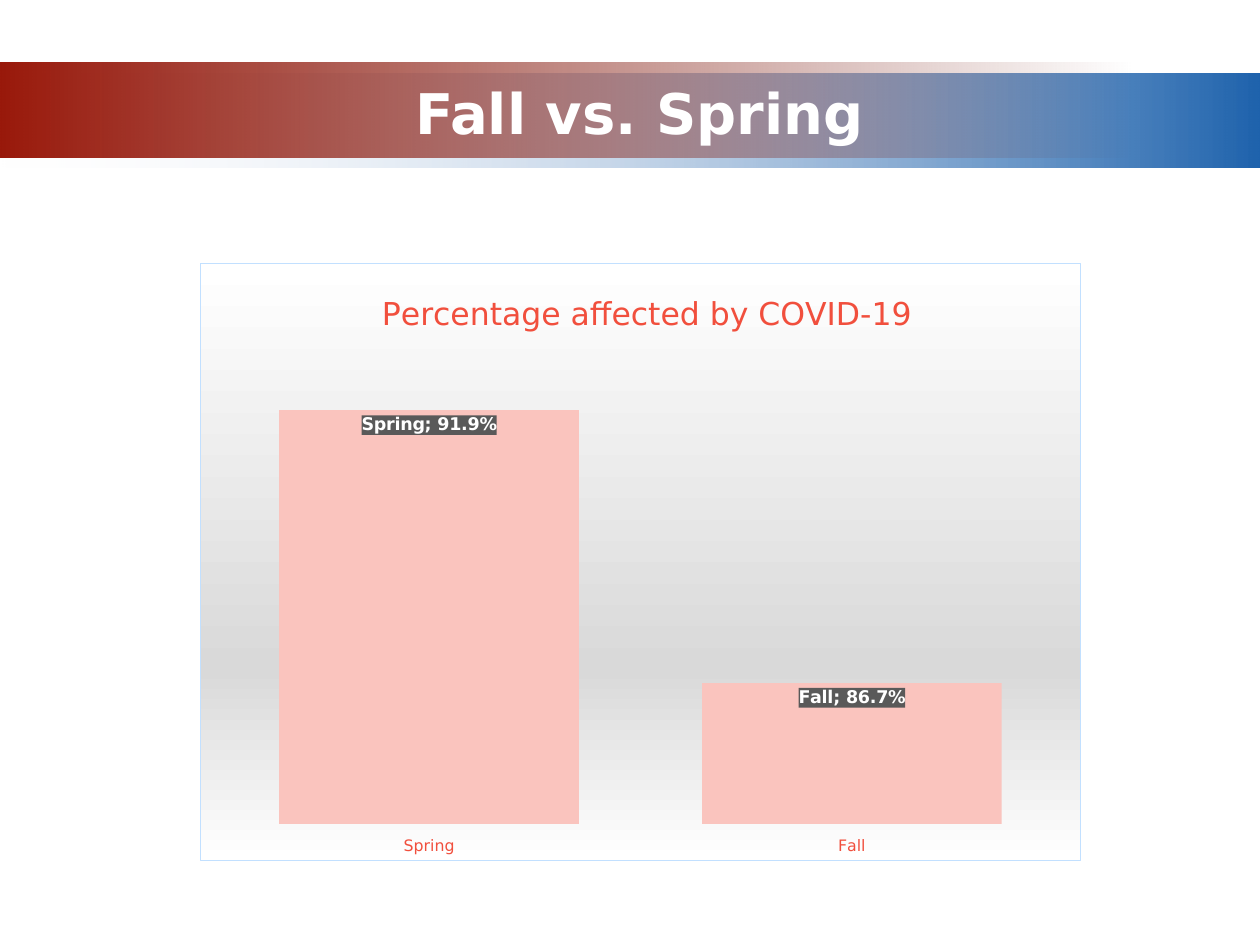
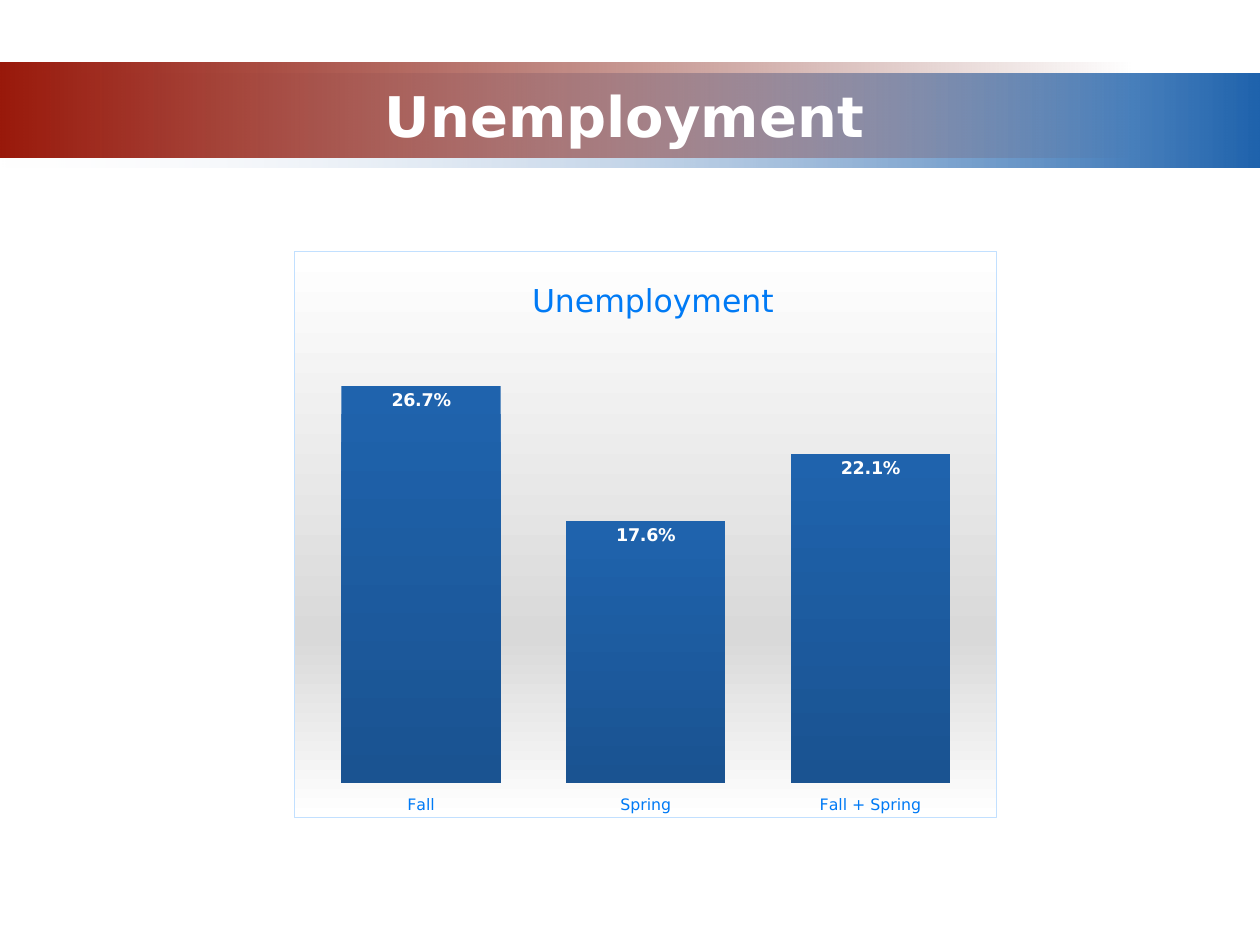
from pptx import Presentation
from pptx.chart.data import CategoryChartData
from pptx.dml.color import RGBColor
from pptx.enum.chart import XL_CHART_TYPE, XL_LABEL_POSITION, XL_TICK_LABEL_POSITION, XL_TICK_MARK
from pptx.enum.shapes import MSO_SHAPE
from pptx.enum.text import MSO_ANCHOR, PP_ALIGN
from pptx.oxml import parse_xml
from pptx.oxml.ns import nsdecls, qn
from pptx.util import Pt

WHITE = RGBColor(0xFF, 0xFF, 0xFF)
MIST = RGBColor(0xF1, 0xF2, 0xF7)
BLUE = RGBColor(0x1F, 0x63, 0xAD)
DEEP_BLUE = RGBColor(0x1A, 0x53, 0x91)
BRIGHT_BLUE = RGBColor(0x00, 0x7A, 0xF5)
PALE_BLUE = RGBColor(0xC2, 0xE0, 0xFF)
NAVY = RGBColor(0x00, 0x33, 0x66)
RED = RGBColor(0x99, 0x19, 0x0B)
DARK_RED = RGBColor(0x6D, 0x12, 0x08)
CORAL = RGBColor(0xF1, 0x4F, 0x3D)
PINK = RGBColor(0xFA, 0xC4, 0xBE)
SILVER = RGBColor(0xD9, 0xD9, 0xD9)
GRAY = RGBColor(0x59, 0x59, 0x59)

FACE = "DejaVu Sans"
PERCENT = "0.0%"
PLOT_PLACE = {"x": 0.02, "y": 0.15, "w": 0.96, "h": 0.79}
PANEL_STOPS = [(0, WHITE, 100), (68, SILVER, 100), (100, WHITE, 100)]
BANDS = [
    ((0, 42, 720, 54), [(0, MIST, 0), (100, BLUE, 100)]),
    ((0, 36, 648, 54), [(0, RED, 100), (100, DARK_RED, 0)]),
]
SLIDES = [
    {
        "heading": "Fall vs. Spring",
        "heading_box": (-9.5, 42, 750, 44.5),
        "chart_title": "Percentage affected by COVID-19",
        "chart_title_place": {"x": 0.2, "y": 0.04},
        "chart_box": (114, 150, 504, 342),
        "shares": {"Spring": 0.919, "Fall": 0.867},
        "scale": (0.84, 0.93),
        "accent": CORAL,
        "bar_stops": [(0, PINK, 100), (100, PINK, 100)],
        "label_fill": GRAY,
    },
    {
        "heading": "Unemployment",
        "heading_box": (66, 43.5, 582, 44.5),
        "chart_title": "Unemployment",
        "chart_title_place": {"x": 0.33, "y": 0.04},
        "chart_box": (168, 143.5, 402, 324),
        "shares": {"Fall": 0.267, "Spring": 0.176, "Fall + Spring": 0.221},
        "scale": (0, 0.3),
        "accent": BRIGHT_BLUE,
        "bar_stops": [(0, BLUE, 100), (100, DEEP_BLUE, 100)],
        "label_fill": None,
    },
]


def assign(target, **values):
    for name, value in values.items():
        setattr(target, name, value)


def style_font(font, size, color, bold=False):
    assign(font, name=FACE, size=Pt(size), bold=bold)
    font.color.rgb = color


def points(box):
    return [Pt(length) for length in box]


def gradient(stops, angle):
    marks = "".join(
        f'<a:gs pos="{pos * 1000}"><a:srgbClr val="{color}">'
        f'<a:alpha val="{opacity * 1000}"/></a:srgbClr></a:gs>'
        for pos, color, opacity in stops
    )
    return (f'<a:gradFill {nsdecls("a")} rotWithShape="1"><a:gsLst>{marks}</a:gsLst>'
            f'<a:lin ang="{angle * 60000}" scaled="0"/></a:gradFill>')


def solid(color):
    return f'<a:solidFill {nsdecls("a")}><a:srgbClr val="{color}"/></a:solidFill>'


def chart_format(content):
    return parse_xml(f'<c:spPr {nsdecls("c", "a")}>{content}</c:spPr>')


def place(parent, index, position):
    for old in parent.findall(qn("c:layout")):
        parent.remove(old)
    target = '<c:layoutTarget val="inner"/>' if "w" in position else ""
    modes = "".join(f'<c:{key}Mode val="edge"/>' for key in ("x", "y"))
    sizes = "".join(f'<c:{key} val="{value}"/>' for key, value in position.items())
    parent.insert(index, parse_xml(
        f'<c:layout {nsdecls("c")}><c:manualLayout>{target}{modes}{sizes}</c:manualLayout></c:layout>'))


def add_bands(slide, layout):
    for box, stops in BANDS:
        band = slide.shapes.add_shape(MSO_SHAPE.RECTANGLE, *points(box))
        band.shadow.inherit = False
        band.line.fill.background()
        band._element.spPr.find(qn("a:prstGeom")).addnext(parse_xml(gradient(stops, 0)))
        layout.shapes._spTree.append(band._element)


def add_heading(slide, content):
    heading = slide.shapes.title
    assign(heading, **dict(zip(("left", "top", "width", "height"), points(content["heading_box"]))))
    heading.text_frame.text = content["heading"]
    heading.text_frame.vertical_anchor = MSO_ANCHOR.MIDDLE
    line = heading.text_frame.paragraphs[0]
    line.alignment = PP_ALIGN.CENTER
    style_font(line.runs[0].font, 32, WHITE, True)


def format_labels(series, label_fill):
    labels = series.data_labels
    assign(labels, show_value=True, show_category_name=label_fill is not None,
           number_format=PERCENT, number_format_is_linked=False,
           position=XL_LABEL_POSITION.INSIDE_END)
    style_font(labels.font, 10, WHITE, True)
    if label_fill is not None:
        element = labels._element
        element.find(qn("c:numFmt")).addnext(chart_format(solid(label_fill)))
        element.find(qn("c:showBubbleSize")).addnext(
            parse_xml(f'<c:separator {nsdecls("c")}>; </c:separator>'))


def add_share_chart(slide, content):
    data = CategoryChartData(number_format=PERCENT)
    data.categories = list(content["shares"])
    data.add_series("Series 1", list(content["shares"].values()))
    chart = slide.shapes.add_chart(
        XL_CHART_TYPE.COLUMN_CLUSTERED, *points(content["chart_box"]), data).chart
    chart.has_legend = False
    style_font(chart.font, 10, NAVY)

    chart.chart_title.text_frame.text = content["chart_title"]
    style_font(chart.chart_title.text_frame.paragraphs[0].runs[0].font, 18, content["accent"])
    place(chart.chart_title._element, 1, content["chart_title_place"])

    space = chart._chartSpace
    border = f'<a:ln w="{Pt(0.75)}">{solid(PALE_BLUE)}</a:ln>'
    space.find(qn("c:chart")).addnext(chart_format(gradient(PANEL_STOPS, 90) + border))
    place(space.find(qn("c:chart")).find(qn("c:plotArea")), 0, PLOT_PLACE)

    low, high = content["scale"]
    assign(chart.value_axis, minimum_scale=low, maximum_scale=high,
           has_major_gridlines=False, visible=False)
    categories = chart.category_axis
    assign(categories, major_tick_mark=XL_TICK_MARK.NONE, minor_tick_mark=XL_TICK_MARK.NONE,
           tick_label_position=XL_TICK_LABEL_POSITION.LOW)
    categories.format.line.fill.background()
    style_font(categories.tick_labels.font, 9, content["accent"])

    assign(chart.plots[0], gap_width=41, vary_by_categories=False)
    series = chart.plots[0].series[0]
    series.invert_if_negative = False
    series._element.get_or_add_spPr().append(parse_xml(gradient(content["bar_stops"], 90)))
    format_labels(series, content["label_fill"])


def main():
    deck = Presentation()
    assign(deck, slide_width=Pt(720), slide_height=Pt(540))
    title_only = deck.slide_layouts[5]
    for number, content in enumerate(SLIDES):
        slide = deck.slides.add_slide(title_only)
        if number == 0:
            add_bands(slide, title_only)
        add_heading(slide, content)
        add_share_chart(slide, content)
    deck.save("out.pptx")


if __name__ == "__main__":
    main()
